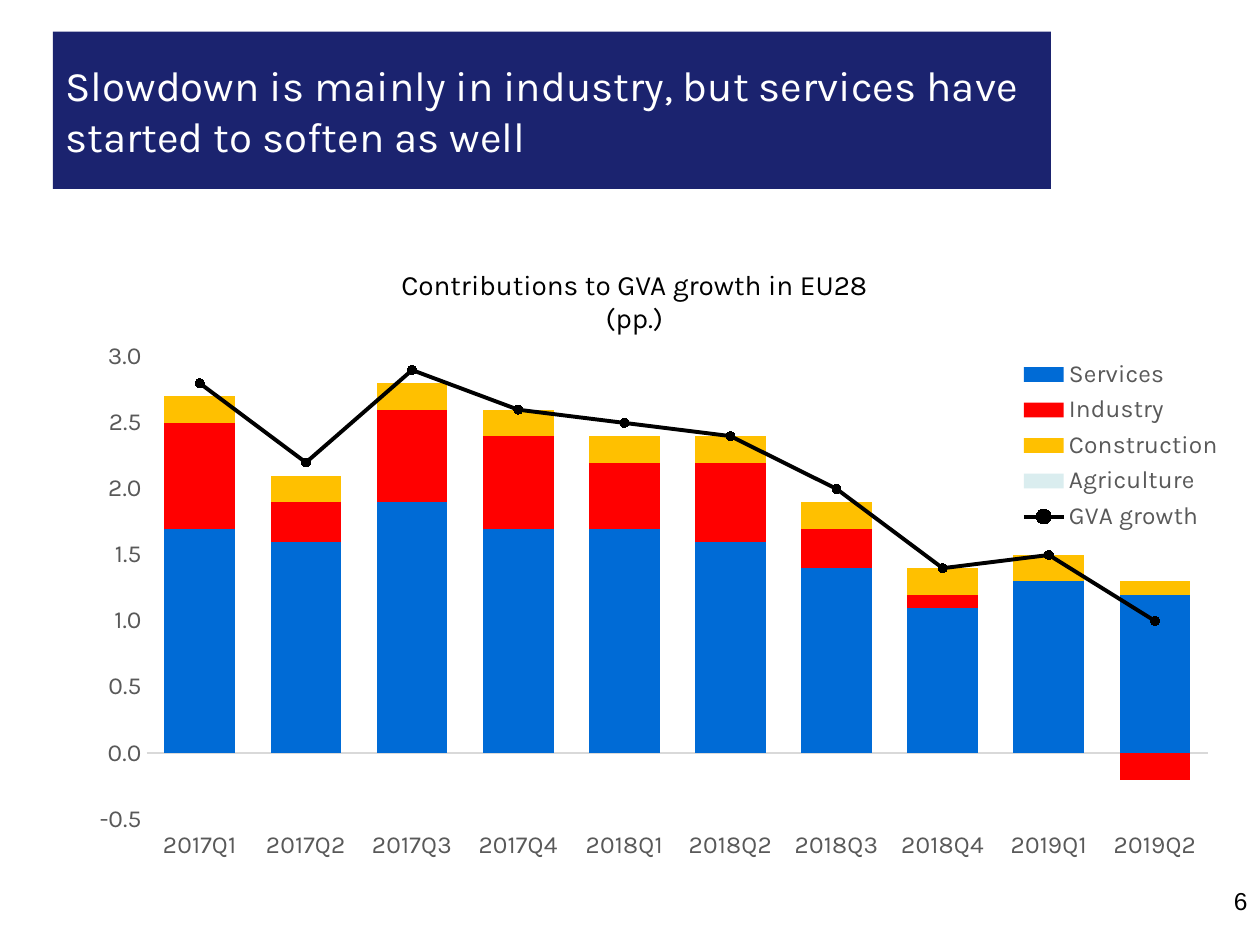
"""Build a slide on sector contributions to GVA growth in the EU28."""
from copy import deepcopy

from pptx import Presentation
from pptx.chart.data import CategoryChartData
from pptx.dml.color import RGBColor
from pptx.enum.chart import (XL_CHART_TYPE, XL_LEGEND_POSITION, XL_MARKER_STYLE,
                             XL_TICK_LABEL_POSITION, XL_TICK_MARK)
from pptx.enum.text import MSO_ANCHOR, PP_ALIGN
from pptx.oxml import parse_xml
from pptx.oxml.ns import nsdecls, qn
from pptx.util import Inches, Pt

COLORS = {"navy": "1B236F", "white": "FFFFFF", "black": "000000",
          "gray": "595959", "rule": "D9D9D9", "Services": "006BD6",
          "Industry": "FF0000", "Construction": "FFC000",
          "Agriculture": "DAEDEF"}
DATA = {
    "Services": (1.7, 1.6, 1.9, 1.7, 1.7, 1.6, 1.4, 1.1, 1.3, 1.2),
    "Industry": (0.8, 0.3, 0.7, 0.7, 0.5, 0.6, 0.3, 0.1, 0, -0.2),
    "Construction": (0.2, 0.2, 0.2, 0.2, 0.2, 0.2, 0.2, 0.2, 0.2, 0.1),
    "Agriculture": (0,) * 10,
    "GVA growth": (2.8, 2.2, 2.9, 2.6, 2.5, 2.4, 2, 1.4, 1.5, 1),
}


def style(font, size, color, name="Karla"):
    values = {"size": Pt(size), "name": name, "bold": False}
    for key, value in values.items():
        setattr(font, key, value)
    font.color.rgb = RGBColor.from_string(COLORS[color])


def layout(box, target=""):
    marks = "".join(f'<c:{key} val="{val}"/>' for key, val in box.items())
    return parse_xml(f'<c:layout {nsdecls("c")}><c:manualLayout>{target}'
                     f'<c:xMode val="edge"/><c:yMode val="edge"/>{marks}'
                     '</c:manualLayout></c:layout>')


prs = Presentation()
prs.slide_width, prs.slide_height = Inches(10), Inches(7.5)
slide = prs.slides.add_slide(prs.slide_layouts[5])

title = slide.shapes.title
place = {"left": 0.42, "top": 0.25, "width": 7.92, "height": 1.25}
for key, value in place.items():
    setattr(title, key, Inches(value))
title.fill.solid()
title.fill.fore_color.rgb = RGBColor.from_string(COLORS["navy"])
title.text = ("Slowdown is mainly in industry, "
              "but services have started to soften as well")
title.text_frame.vertical_anchor = MSO_ANCHOR.MIDDLE
head = title.text_frame.paragraphs[0]
head.alignment = PP_ALIGN.LEFT
style(head.runs[0].font, 24, "white")

data = CategoryChartData(number_format="0.0")
data.categories = [f"{year}Q{part}" for year in (2017, 2018, 2019)
                   for part in (1, 2, 3, 4)][:10]
for name, values in DATA.items():
    data.add_series(name, values)
chart = slide.shapes.add_chart(
    XL_CHART_TYPE.COLUMN_STACKED, Inches(0.17), Inches(1.83),
    Inches(9.75), Inches(5.42), data).chart
style(chart.font, 14, "black")
chart.has_title = False

bars = chart.plots[0]
bars.gap_width, bars.overlap = 50, 100
bars.vary_by_categories = False
for item in list(bars.series)[:4]:
    item.invert_if_negative = False
    item.format.fill.solid()
    item.format.fill.fore_color.rgb = RGBColor.from_string(COLORS[item.name])

area = chart._chartSpace.chart.plotArea
bar = area.find(qn("c:barChart"))
ser = bar.findall(qn("c:ser"))[-1]
for flag in ser.findall(qn("c:invertIfNegative")):
    ser.remove(flag)
combo = parse_xml(f'<c:lineChart {nsdecls("c")}><c:grouping val="standard"/>'
                  '<c:varyColors val="0"/></c:lineChart>')
combo.append(ser)
combo.append(parse_xml(f'<c:marker {nsdecls("c")} val="1"/>'))
for axis in bar.findall(qn("c:axId")):
    combo.append(deepcopy(axis))
bar.addnext(combo)

growth = chart.plots[1].series[0]
growth.smooth = False
growth.format.line.width = Pt(2.25)
growth.marker.style, growth.marker.size = XL_MARKER_STYLE.CIRCLE, 5
growth.marker.format.fill.solid()
for paint in (growth.format.line.color, growth.marker.format.fill.fore_color,
              growth.marker.format.line.color):
    paint.rgb = RGBColor.from_string(COLORS["black"])

cat, val = chart.category_axis, chart.value_axis
for axis in (cat, val):
    axis.has_major_gridlines = False
    axis.major_tick_mark = axis.minor_tick_mark = XL_TICK_MARK.NONE
    style(axis.tick_labels.font, 14, "gray")
cat.tick_label_position = XL_TICK_LABEL_POSITION.LOW
cat.format.line.color.rgb = RGBColor.from_string(COLORS["rule"])
cat.format.line.width = Pt(0.75)
scale = {"minimum_scale": -0.5, "maximum_scale": 3, "major_unit": 0.5}
for key, value in scale.items():
    setattr(val, key, value)
val.format.line.fill.background()
val.tick_labels.number_format = "0.0"
val.tick_labels.number_format_is_linked = False

chart.has_legend = True
legend = chart.legend
legend.position = XL_LEGEND_POSITION.BOTTOM
legend.include_in_layout = False
style(legend.font, 14, "gray")
for old in legend._element.findall(qn("c:layout")):
    legend._element.remove(old)
legend._element.find(qn("c:legendPos")).addnext(
    layout({"x": 0.79, "y": 0.18, "w": 0.21, "h": 0.27}))
for old in area.findall(qn("c:layout")):
    area.remove(old)
area.insert(0, layout({"x": 0.102, "y": 0.185, "w": 0.864, "h": 0.677},
                      '<c:layoutTarget val="inner"/>'))

note = slide.shapes.add_textbox(Inches(1.17), Inches(2.08),
                                Inches(7.67), Inches(0.35)).text_frame
inset = {"margin_left": 0.06, "margin_top": 0.04,
         "margin_right": 0, "margin_bottom": 0}
for key, value in inset.items():
    setattr(note, key, Inches(value))
note.word_wrap = True
note.text = "Contributions to GVA growth in EU28\n(pp.)"
for para in note.paragraphs:
    para.alignment = PP_ALIGN.CENTER
    style(para.runs[0].font, 16, "black")

page = slide.shapes.add_textbox(Inches(7.67), Inches(6.98),
                                Inches(2.33), Inches(0.52)).text_frame
page.word_wrap = True
page.text = "6"
page.paragraphs[0].alignment = PP_ALIGN.RIGHT
style(page.paragraphs[0].runs[0].font, 14, "black", "Arial")

prs.save("out.pptx")
